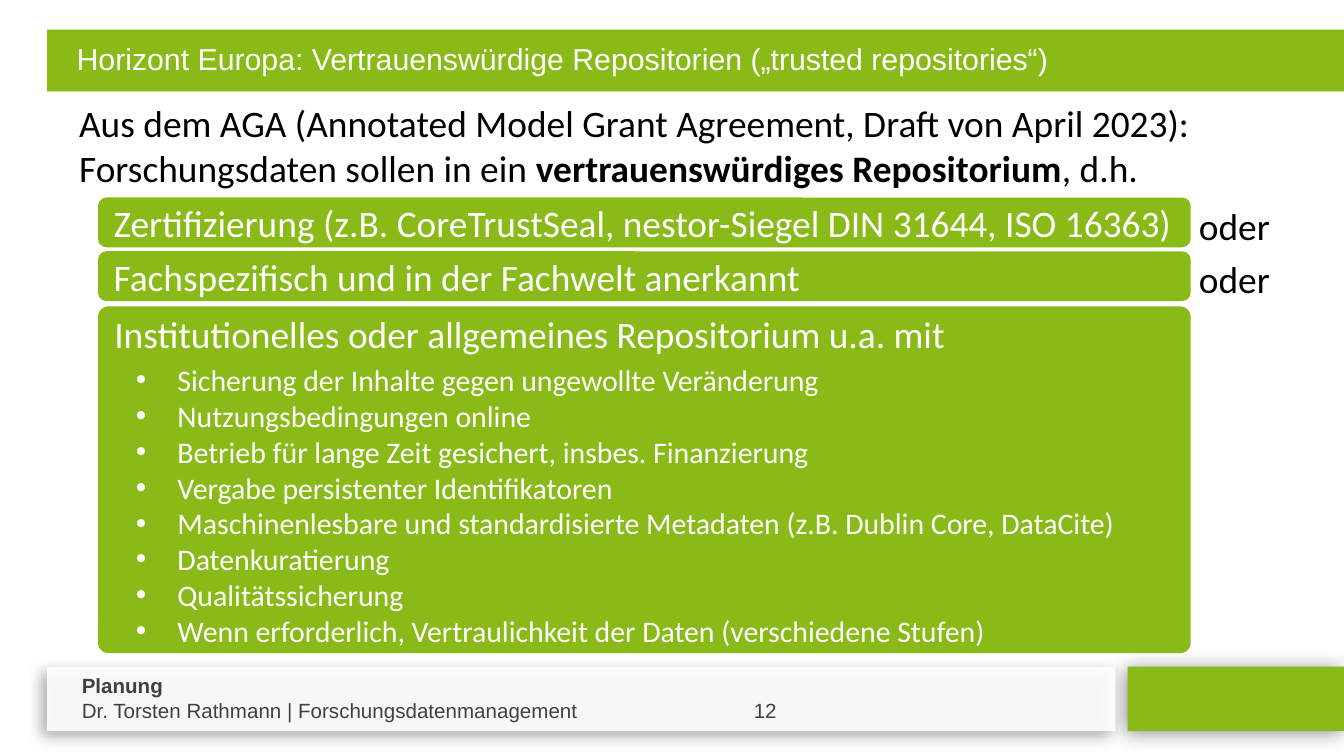
"""Build the slide on trusted repositories in Horizon Europe."""
from lxml import etree
from pptx import Presentation, util as u
from pptx.dml.color import RGBColor
from pptx.enum import shapes, text
from pptx.oxml import parse_xml
from pptx.oxml.ns import nsdecls, qn

GREEN, WHITE, BLACK, GREY = "89BA17", "FFFFFF", "000000", "404040"


def block(kind, x, y, w, h, color):
    sp = s.shapes.add_shape(kind, *map(u.Inches, (x, y, w, h)))
    sp.shadow.inherit = False
    sp.fill.solid()
    sp.fill.fore_color.rgb = RGBColor.from_string(color)
    sp.line.fill.background()
    return sp


def write(tf, paragraphs, size, color, name="Calibri"):
    tf.word_wrap = True
    for i, runs in enumerate(paragraphs):
        p = tf.paragraphs[0] if i == 0 else tf.add_paragraph()
        p.alignment = text.PP_ALIGN.LEFT
        for words, bold in runs:
            r = p.add_run()
            r.text = words
            r.font.size = u.Pt(size)
            r.font.name = name
            r.font.bold = bold
            r.font.color.rgb = RGBColor.from_string(color)


prs = Presentation()
prs.slide_width = u.Inches(10)
prs.slide_height = u.Inches(10) * 9 // 16
s = prs.slides.add_slide(prs.slide_layouts[6])
rect = shapes.MSO_SHAPE.RECTANGLE
rounded = shapes.MSO_SHAPE.ROUNDED_RECTANGLE

footer = [(8.39, 1.61, GREEN, 42, 10.8, 2, 142),
          (0.35, 7.95, WHITE, 34, 7.5, 4, 145)]
for x, w, color, alpha, blur, dist, angle in footer:
    sp = block(rect, x, 4.96, w, 0.48, color)
    sp._element.spPr.remove(sp._element.spPr.find(qn("a:effectLst")))
    sp._element.spPr.append(parse_xml(
        f'<a:effectLst {nsdecls("a")}><a:outerShdw blurRad="{u.Pt(blur)}" '
        f'dist="{u.Pt(dist)}" dir="{angle * 60000}" algn="ctr" rotWithShape="0">'
        f'<a:srgbClr val="{BLACK}"><a:alpha val="{alpha * 1000}"/></a:srgbClr>'
        '</a:outerShdw></a:effectLst>'))
clr = sp._element.spPr.find(qn("a:solidFill"))[0]
etree.SubElement(clr, qn("a:alpha")).set("val", "91000")

sp = s.shapes.add_textbox(*map(u.Inches, (0.51, 4.96, 5.98, 0.47)))
write(sp.text_frame, [[("Planung", True)],
                      [("Dr. Torsten Rathmann | Forschungsdatenmanagement\t12", False)]],
      11, GREY, "Arial")
pPr = sp.text_frame.paragraphs[1]._p.get_or_add_pPr()
tabs = etree.SubElement(pPr, qn("a:tabLst"))
etree.SubElement(tabs, qn("a:tab"), pos=str(u.Inches(5)), algn="l")

block(rect, 0.35, 0.22, 9.69, 0.46, GREEN)

sp = s.shapes.add_textbox(*map(u.Inches, (0.49, 0.7, 9.48, 0.77)))
write(sp.text_frame, [[
    ("Aus dem AGA (Annotated Model Grant Agreement, Draft von April 2023): "
     "Forschungsdaten sollen in ein ", False),
    ("vertrauenswürdiges Repositorium", True), (", d.h.", False)]], 20, BLACK)

sp = s.shapes.add_textbox(*map(u.Inches, (0.35, 0.22, 9.69, 0.35)))
tf = sp.text_frame
tf.margin_left, tf.margin_top = u.Inches(0.22), u.Inches(0.08)
write(tf, [[("Horizont Europa: Vertrauenswürdige Repositorien („trusted repositories“)", False)]],
      16.2, WHITE, "Arial")

options = [(1.47, "Zertifizierung (z.B. CoreTrustSeal, nestor-Siegel DIN 31644, ISO 16363)"),
           (1.87, "Fachspezifisch und in der Fachwelt anerkannt")]
for y, words in options:
    sp = block(rounded, 0.73, y, 8.13, 0.37, GREEN)
    sp.text_frame.vertical_anchor = text.MSO_ANCHOR.MIDDLE
    write(sp.text_frame, [[(words, False)]], 20, WHITE)
    sp = s.shapes.add_textbox(*map(u.Inches, (8.45, y - 0.01, 1.15, 0.44)))
    sp.text_frame.margin_left = u.Inches(0.47)
    write(sp.text_frame, [[("oder", False)]], 20, BLACK)

criteria = ["Sicherung der Inhalte gegen ungewollte Veränderung",
            "Nutzungsbedingungen online",
            "Betrieb für lange Zeit gesichert, insbes. Finanzierung",
            "Vergabe persistenter Identifikatoren",
            "Maschinenlesbare und standardisierte Metadaten (z.B. Dublin Core, DataCite)",
            "Datenkuratierung",
            "Qualitätssicherung",
            "Wenn erforderlich, Vertraulichkeit der Daten (verschiedene Stufen)"]
sp = block(rounded, 0.73, 2.28, 8.13, 2.58, GREEN)
sp.adjustments[0] = 0.03
tf = sp.text_frame
tf.vertical_anchor = text.MSO_ANCHOR.MIDDLE
heading = "Institutionelles oder allgemeines Repositorium u.a. mit"
write(tf, [[(words, False)] for words in [heading] + criteria], 16, WHITE)
tf.paragraphs[0].runs[0].font.size = u.Pt(20)
tf.paragraphs[1].space_before = u.Pt(3)
for p in tf.paragraphs[1:]:
    pPr = p._p.get_or_add_pPr()
    pPr.set("marL", str(u.Inches(0.47)))
    pPr.set("indent", str(u.Inches(-0.31)))
    etree.SubElement(pPr, qn("a:buFont"), typeface="Arial")
    etree.SubElement(pPr, qn("a:buChar"), char="•")

prs.save("out.pptx")
